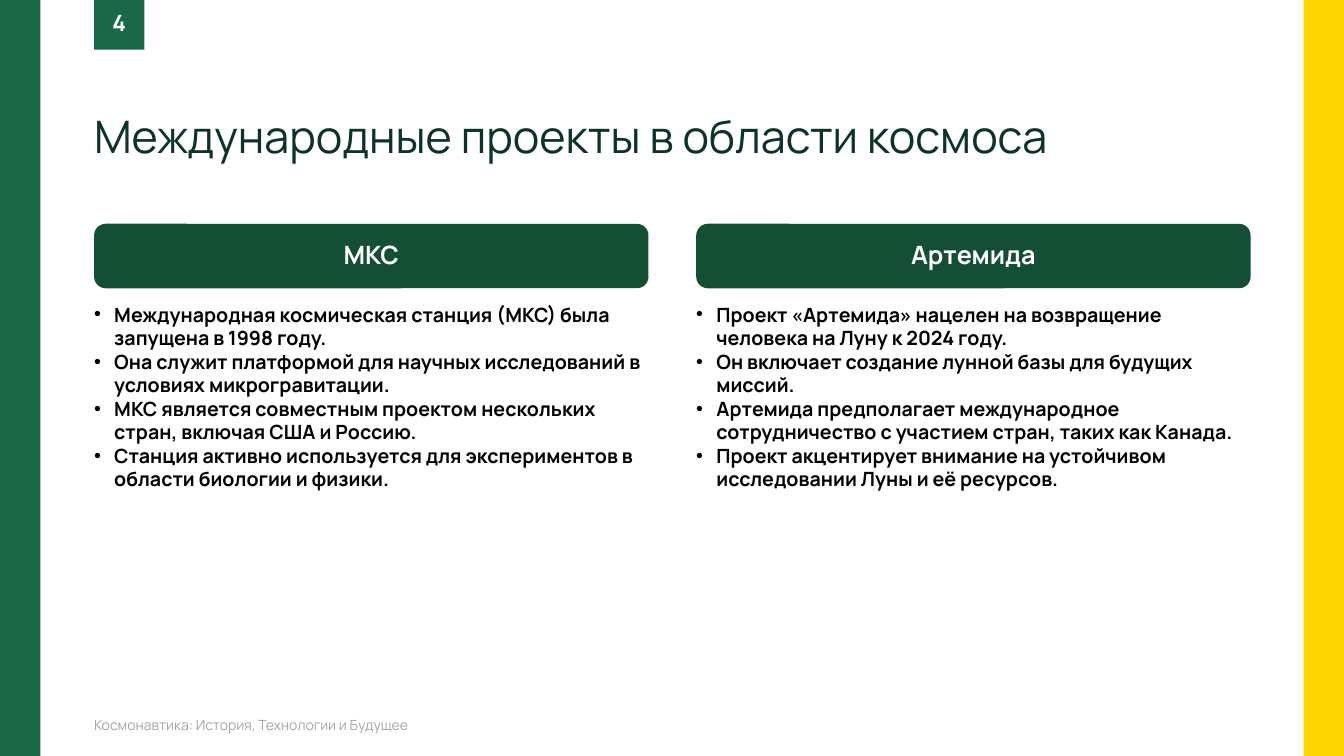
from lxml.etree import SubElement
from pptx import Presentation
from pptx.dml.color import RGBColor
from pptx.enum.shapes import MSO_SHAPE
from pptx.enum.text import MSO_ANCHOR, PP_ALIGN
from pptx.oxml.ns import qn
from pptx.util import Inches, Pt

COLORS = {
    "green": "1A6847", "yellow": "FFD600", "header": "134E35", "title": "0D3423",
    "footer": "A6A6A6", "text": "000000", "white": "FFFFFF",
}

PROJECTS = [
    ("МКС", [
        "Международная космическая станция (МКС) была запущена в 1998 году.",
        "Она служит платформой для научных исследований в условиях микрогравитации.",
        "МКС является совместным проектом нескольких стран, включая США и Россию.",
        "Станция активно используется для экспериментов в области биологии и физики.",
    ]),
    ("Артемида", [
        "Проект «Артемида» нацелен на возвращение человека на Луну к 2024 году.",
        "Он включает создание лунной базы для будущих миссий.",
        "Артемида предполагает международное сотрудничество с участием стран, таких как Канада.",
        "Проект акцентирует внимание на устойчивом исследовании Луны и её ресурсов.",
    ]),
]

# Layout in percent of the slide's width and height
LEFT, COL_W, COL_STEP = 7, 41.25, 44.8
BAR_W = 3


class Deck:
    font = "Manrope"

    def __init__(self, prs):
        self.prs = prs
        self.slide = prs.slides.add_slide(prs.slide_layouts[6])

    def place(self, x, y, w, h):
        sw, sh = self.prs.slide_width, self.prs.slide_height
        return [int(v * size / 100) for v, size in ((x, sw), (y, sh), (w, sw), (h, sh))]

    def block(self, box, color, rounding=None):
        kind = MSO_SHAPE.RECTANGLE if rounding is None else MSO_SHAPE.ROUNDED_RECTANGLE
        sp = self.slide.shapes.add_shape(kind, *self.place(*box))
        if rounding is not None:
            sp.adjustments[0] = rounding
        sp.fill.solid()
        sp.fill.fore_color.rgb = RGBColor.from_string(COLORS[color])
        sp.line.fill.background()
        sp.shadow.inherit = False
        return sp

    def textbox(self, box):
        return self.slide.shapes.add_textbox(*self.place(*box))

    def add_text(self, sp, lines, size, color, bold=False, align=PP_ALIGN.LEFT,
                 anchor=MSO_ANCHOR.TOP, inset=(0, 0), spacing=0.9, before=0, bullet=False):
        tf = sp.text_frame
        tf.word_wrap = True
        tf.vertical_anchor = anchor
        tf.margin_left = tf.margin_right = Inches(inset[0])
        tf.margin_top = tf.margin_bottom = Inches(inset[1])
        for i, line in enumerate(lines):
            p = tf.add_paragraph() if i else tf.paragraphs[0]
            p.alignment = align
            p.line_spacing = spacing
            p.space_before = Pt(before)
            if bullet:
                self.bullet(p)
            r = p.add_run()
            r.text = line
            r.font.name = self.font
            r.font.size = Pt(size)
            r.font.bold = bold
            r.font.color.rgb = RGBColor.from_string(COLORS[color])

    def bullet(self, p):
        pPr = p._p.get_or_add_pPr()
        pPr.set("marL", str(Inches(0.2)))
        pPr.set("indent", str(-Inches(0.2)))
        SubElement(pPr, qn("a:buFont"), typeface="Arial")
        SubElement(pPr, qn("a:buChar"), char="•")


def main():
    prs = Presentation()
    prs.slide_width, prs.slide_height = Inches(13.33), Inches(7.5)
    s = Deck(prs)

    # Side bars
    s.block((0, 0, BAR_W, 100), "green")
    s.block((100 - BAR_W, 0, BAR_W, 100), "yellow")

    # Footer and title
    s.add_text(s.textbox((LEFT, 94.67, 49.36, 2.67)),
               ["Космонавтика: История, Технологии и Будущее"], 10, "footer",
               anchor=MSO_ANCHOR.MIDDLE, before=10)
    s.add_text(s.textbox((LEFT, 0, 86, 21.6)),
               ["Международные проекты в области космоса"], 32, "title",
               anchor=MSO_ANCHOR.BOTTOM, before=10)

    # Page number
    s.add_text(s.block((LEFT, -0.1, 3.75, 6.67), "green"), ["4"], 16, "white", bold=True,
               align=PP_ALIGN.CENTER, anchor=MSO_ANCHOR.MIDDLE, inset=(0.1, 0.05), before=10)

    # Project columns
    for i, (name, facts) in enumerate(PROJECTS):
        x = LEFT + i * COL_STEP
        s.add_text(s.textbox((x, 40, COL_W, 42.67)), facts, 14, "text", bold=True,
                   spacing=1.0, bullet=True)
        s.add_text(s.block((x, 29.6, COL_W, 8.53), "header", rounding=0.18), [name], 18,
                   "white", bold=True, align=PP_ALIGN.CENTER, inset=(0, 0.15))

    prs.save("out.pptx")


if __name__ == "__main__":
    main()
